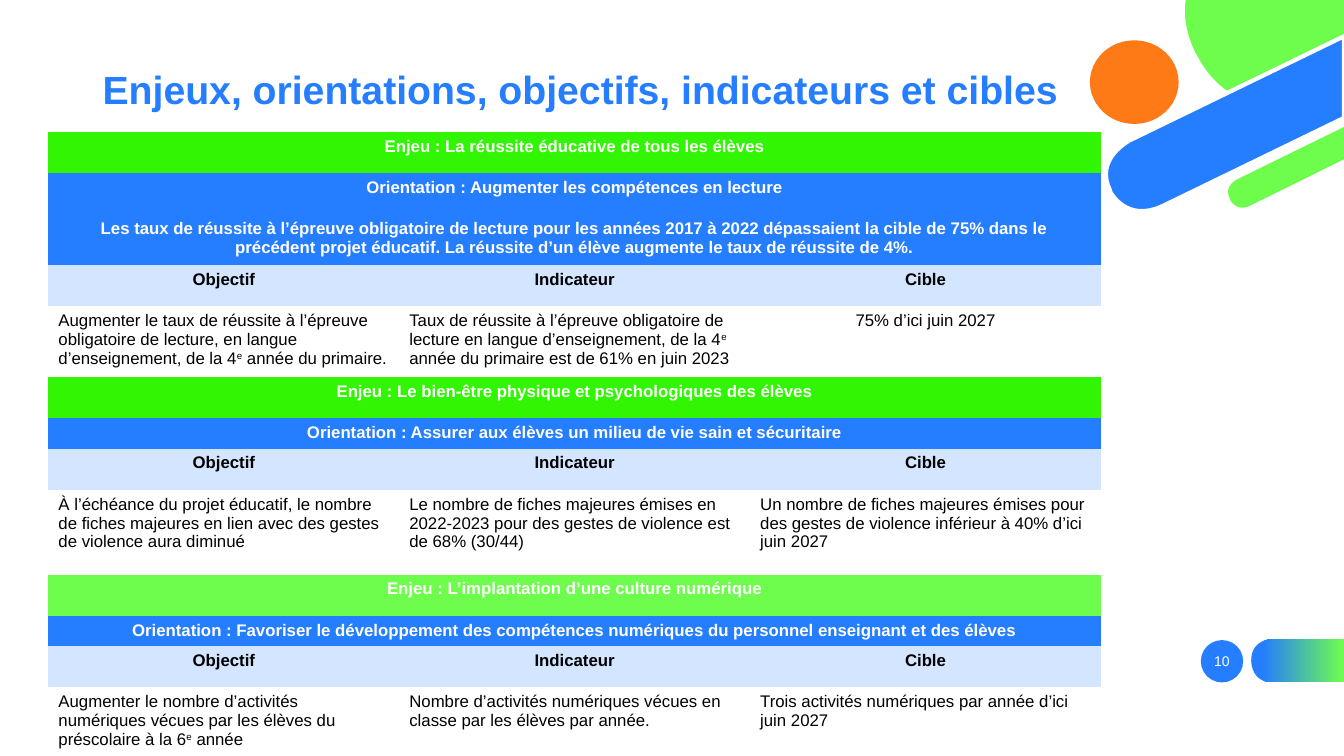
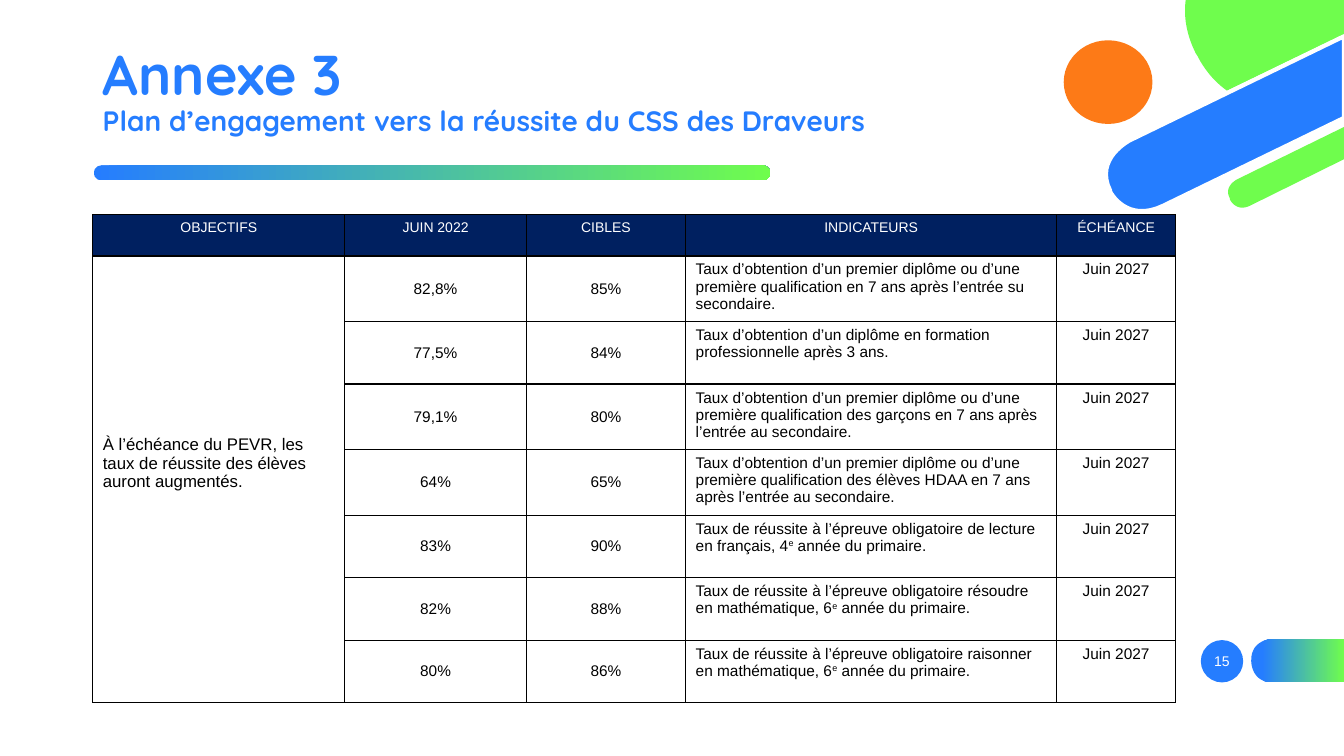
import dataclasses

import lxml.etree
import pptx
import pptx.dml.color
import pptx.enum.shapes
import pptx.enum.text
import pptx.oxml.ns
import pptx.util

EMU_PER_PX = 9144
SHAPES = pptx.enum.shapes.MSO_SHAPE
LEFT = pptx.enum.text.PP_ALIGN.LEFT
CENTER = pptx.enum.text.PP_ALIGN.CENTER
TOP = pptx.enum.text.MSO_ANCHOR.TOP
MIDDLE = pptx.enum.text.MSO_ANCHOR.MIDDLE
PLAIN_TABLE = "{2D5ABB26-0587-4C30-8999-92F81FD0307C}"


@dataclasses.dataclass(frozen=True)
class Theme:
    blue: str = "257DFF"
    green: str = "6FFD4D"
    vivid_green: str = "32F503"
    pale_blue: str = "D3E5FF"
    navy: str = "002060"
    orange: str = "FD7A17"
    white: str = "FFFFFF"
    black: str = "000000"
    body_font: str = "Arial"
    display_font: str = "Quicksand"
    annex_size: int = 40
    title_size: int = 28
    subtitle_size: int = 20
    body_size: int = 12
    detail_size: int = 11
    small_size: int = 10


GREEN_DISC = [(1188, 56), (1188, 56, 1197, 76, 1217, 90), (1333, 34), (1333, 0),
              (1176, 0), (1174, 15, 1176, 33, 1186, 53)]
BLUE_BAND = [(1121, 139), (1121, 139, 1085, 157, 1101, 189), (1101, 190),
             (1101, 190, 1117, 222, 1154, 204), (1333, 117), (1333, 36)]
GREEN_BAND = [(1333, 126), (1227, 178), (1227, 178, 1213, 185, 1220, 197), (1220, 198),
              (1220, 198, 1226, 211, 1240, 204), (1333, 158)]
PAGE_TAB = [(1262, 677), (1333, 677), (1333, 634), (1262, 634),
            (1262, 634, 1241, 634, 1241, 655), (1241, 656),
            (1241, 656, 1241, 677, 1262, 677)]


def px(length):
    return pptx.util.Emu(length * EMU_PER_PX)


def rgb(color):
    return pptx.dml.color.RGBColor.from_string(color)


def flatten(outline, steps=16):
    points = []
    for node in outline:
        if len(node) == 2:
            points.append(node)
            continue
        anchors = [points[-1], node[:2], node[2:4], node[4:]]
        for step in range(1, steps + 1):
            t = step / steps
            weights = [(1 - t) ** 3, 3 * t * (1 - t) ** 2, 3 * t * t * (1 - t), t ** 3]
            points.append(tuple(sum(w * a[axis] for w, a in zip(weights, anchors))
                                for axis in (0, 1)))
    return [(x * EMU_PER_PX, y * EMU_PER_PX) for x, y in points]


class Deck:
    def __init__(self, theme):
        self.theme = theme
        self.presentation = pptx.Presentation()
        self.presentation.slide_width = px(1333)
        self.presentation.slide_height = px(750)
        self.slide = None

    def new_slide(self, number, title, circle_left):
        theme = self.theme
        self.slide = self.presentation.slides.add_slide(self.presentation.slide_layouts[6])
        self.outline(GREEN_DISC, theme.green)
        self.outline(GREEN_BAND, theme.green)
        self.outline(BLUE_BAND, theme.blue, border=theme.white)
        self.gradient(self.outline(PAGE_TAB, theme.blue), start=0.12)
        badge = self.shape(SHAPES.OVAL, (1191, 635, 42, 42), theme.blue)
        frame = badge.text_frame
        frame.margin_left = frame.margin_right = frame.margin_top = frame.margin_bottom = 0
        frame.vertical_anchor = MIDDLE
        self.words(frame.paragraphs[0], str(number), theme.small_size, theme.white, align=CENTER)
        self.title(title)
        self.shape(SHAPES.OVAL, (circle_left, 40, 88, 83), theme.orange)

    def paint(self, shape, color, border=None):
        shape.shadow.inherit = False
        shape.fill.solid()
        shape.fill.fore_color.rgb = rgb(color)
        if border:
            shape.line.color.rgb = rgb(border)
            shape.line.width = pptx.util.Pt(3)
        else:
            shape.line.fill.background()
        return shape

    def shape(self, kind, box, color):
        return self.paint(self.slide.shapes.add_shape(kind, *map(px, box)), color)

    def outline(self, nodes, color, border=None):
        points = flatten(nodes)
        builder = self.slide.shapes.build_freeform(*points[0], scale=1.0)
        builder.add_line_segments(points[1:], close=True)
        return self.paint(builder.convert_to_shape(), color, border)

    def gradient(self, shape, start=0):
        shape.fill.gradient()
        shape.fill.gradient_angle = 0
        first, last = shape.fill.gradient_stops
        first.color.rgb, first.position = rgb(self.theme.blue), start
        last.color.rgb, last.position = rgb(self.theme.green), 1

    def title_rule(self):
        rule = self.shape(SHAPES.ROUNDED_RECTANGLE, (93, 164, 671, 15), self.theme.blue)
        rule.adjustments[0] = 0.5
        self.gradient(rule)

    def words(self, paragraph, text, size, color, font=None, bold=False, align=LEFT):
        paragraph.alignment = align
        for index, part in enumerate(text.split("^")):
            pieces = [part] if index == 0 else [part[:1], part[1:]]
            for position, piece in enumerate(pieces):
                run = paragraph.add_run()
                run.text = piece
                run.font.size = pptx.util.Pt(size)
                run.font.name = font or self.theme.body_font
                run.font.bold = bold
                run.font.color.rgb = rgb(color)
                if index and position == 0:
                    run._r.get_or_add_rPr().set("baseline", "30000")

    def title(self, lines):
        frame = self.slide.shapes.add_textbox(*map(px, (92, 40, 990, 103))).text_frame
        frame.word_wrap = True
        frame.vertical_anchor = MIDDLE
        for index, (text, size, font) in enumerate(lines):
            paragraph = frame.add_paragraph() if index else frame.paragraphs[0]
            paragraph.line_spacing = 0.9
            self.words(paragraph, text, size, self.theme.blue, font, bold=True)

    def table(self, left, top, columns, rows):
        frame = self.slide.shapes.add_table(len(rows), len(columns), px(left), px(top),
                                            px(sum(columns)), px(sum(rows)))
        table = frame.table
        table.first_row = table.horz_banding = False
        table._tbl.tblPr.find(pptx.oxml.ns.qn("a:tableStyleId")).text = PLAIN_TABLE
        for column, width in zip(table.columns, columns):
            column.width = px(width)
        for row, height in zip(table.rows, rows):
            row.height = px(height)
        return table

    def cell(self, cell, text, size, color, fill=None, bold=False, align=LEFT, anchor=TOP):
        if fill:
            cell.fill.solid()
            cell.fill.fore_color.rgb = rgb(fill)
        else:
            cell.fill.background()
        cell.vertical_anchor = anchor
        self.words(cell.text_frame.paragraphs[0], text, size, color, bold=bold, align=align)

    def grid(self, table):
        for cell in table.iter_cells():
            properties = cell._tc.get_or_add_tcPr()
            for index, side in enumerate(("lnL", "lnR", "lnT", "lnB")):
                line = lxml.etree.Element(pptx.oxml.ns.qn("a:" + side), w="12700")
                solid = lxml.etree.SubElement(line, pptx.oxml.ns.qn("a:solidFill"))
                lxml.etree.SubElement(solid, pptx.oxml.ns.qn("a:srgbClr"), val=self.theme.black)
                properties.insert(index, line)


def issues_slide(deck):
    theme = deck.theme
    deck.new_slide(10, [("Enjeux, orientations, objectifs, indicateurs et cibles",
                         theme.title_size, theme.body_font)], 1081)
    issues = [
        (theme.vivid_green, "Enjeu : La réussite éducative de tous les élèves",
         [("Orientation : Augmenter les compétences en lecture", 41),
          ("Les taux de réussite à l’épreuve obligatoire de lecture pour les années 2017 à 2022 "
           "dépassaient la cible de 75% dans le précédent projet éducatif. La réussite d’un élève "
           "augmente le taux de réussite de 4%.", 48)],
         ["Augmenter le taux de réussite à l’épreuve obligatoire de lecture, en langue "
          "d’enseignement, de la 4^e année du primaire.",
          "Taux de réussite à l’épreuve obligatoire de lecture en langue d’enseignement, "
          "de la 4^e année du primaire est de 61% en juin 2023",
          "75% d’ici juin 2027"], 65, CENTER),
        (theme.vivid_green, "Enjeu : Le bien-être physique et psychologiques des élèves",
         [("Orientation : Assurer aux élèves un milieu de vie sain et sécuritaire", 29)],
         ["À l’échéance du projet éducatif, le nombre de fiches majeures en lien avec des gestes "
          "de violence aura diminué",
          "Le nombre de fiches majeures émises en 2022-2023 pour des gestes de violence est "
          "de 68% (30/44)",
          "Un nombre de fiches majeures émises pour des gestes de violence inférieur à 40% "
          "d’ici juin 2027"], 84, LEFT),
        (theme.green, "Enjeu : L’implantation d’une culture numérique",
         [("Orientation : Favoriser le développement des compétences numériques du personnel "
           "enseignant et des élèves", 29)],
         ["Augmenter le nombre d’activités numériques vécues par les élèves du préscolaire "
          "à la 6^e année",
          "Nombre d’activités numériques vécues en classe par les élèves par année.",
          "Trois activités numériques par année d’ici juin 2027"], 66, LEFT),
    ]
    rows = []
    for issue_color, issue, orientations, details, height, target_align in issues:
        rows.append(([issue], 41, theme.white, issue_color, True, [CENTER]))
        for text, orientation_height in orientations:
            rows.append(([text], orientation_height, theme.white, theme.blue, True, [CENTER]))
        rows.append((["Objectif", "Indicateur", "Cible"], 41, theme.black, theme.pale_blue,
                     True, [CENTER] * 3))
        rows.append((details, height, theme.black, None, False, [LEFT, LEFT, target_align]))
    table = deck.table(48, 131, [348] * 3, [row[1] for row in rows])
    for index, (texts, height, color, fill, bold, aligns) in enumerate(rows):
        if len(texts) == 1:
            table.cell(index, 0).merge(table.cell(index, 2))
        for column, (text, align) in enumerate(zip(texts, aligns)):
            deck.cell(table.cell(index, column), text, theme.body_size, color, fill, bold, align)


def annex_slide(deck):
    theme = deck.theme
    deck.new_slide(15, [("Annexe 3", theme.annex_size, theme.display_font),
                        ("Plan d’engagement vers la réussite du CSS des Draveurs",
                         theme.subtitle_size, theme.display_font)], 1055)
    deck.title_rule()
    headings = ["OBJECTIFS", "JUIN 2022", "CIBLES", "INDICATEURS", "ÉCHÉANCE"]
    diploma = "Taux d’obtention d’un premier diplôme ou d’une première qualification "
    exam = "Taux de réussite à l’épreuve obligatoire "
    indicators = [
        ("82,8%", "85%", diploma + "en 7 ans après l’entrée su secondaire."),
        ("77,5%", "84%", "Taux d’obtention d’un diplôme en formation professionnelle après 3 ans."),
        ("79,1%", "80%", diploma + "des garçons en 7 ans après l’entrée au secondaire."),
        ("64%", "65%", diploma + "des élèves HDAA en 7 ans après l’entrée au secondaire."),
        ("83%", "90%", exam + "de lecture en français, 4^e année du primaire."),
        ("82%", "88%", exam + "résoudre en mathématique, 6^e année du primaire."),
        ("80%", "86%", exam + "raisonner en mathématique, 6^e année du primaire."),
    ]
    table = deck.table(92, 213, [250, 180, 158, 368, 118], [41] + [62] * len(indicators))
    for column, heading in enumerate(headings):
        deck.cell(table.cell(0, column), heading, theme.small_size, theme.white, theme.navy,
                  align=CENTER)
    objective = table.cell(1, 0)
    objective.merge(table.cell(len(indicators), 0))
    deck.cell(objective, "À l’échéance du PEVR, les taux de réussite des élèves auront augmentés.",
              theme.body_size, theme.black, anchor=MIDDLE)
    objective.margin_bottom = px(37)
    layout = [(CENTER, MIDDLE), (CENTER, MIDDLE), (LEFT, TOP), (CENTER, TOP)]
    for row, indicator in enumerate(indicators, 1):
        texts = [*indicator, "Juin 2027"]
        for column, (text, (align, anchor)) in enumerate(zip(texts, layout), 1):
            deck.cell(table.cell(row, column), text, theme.detail_size, theme.black,
                      align=align, anchor=anchor)
    deck.grid(table)


def main():
    deck = Deck(Theme())
    issues_slide(deck)
    annex_slide(deck)
    deck.presentation.save("out.pptx")


if __name__ == "__main__":
    main()
